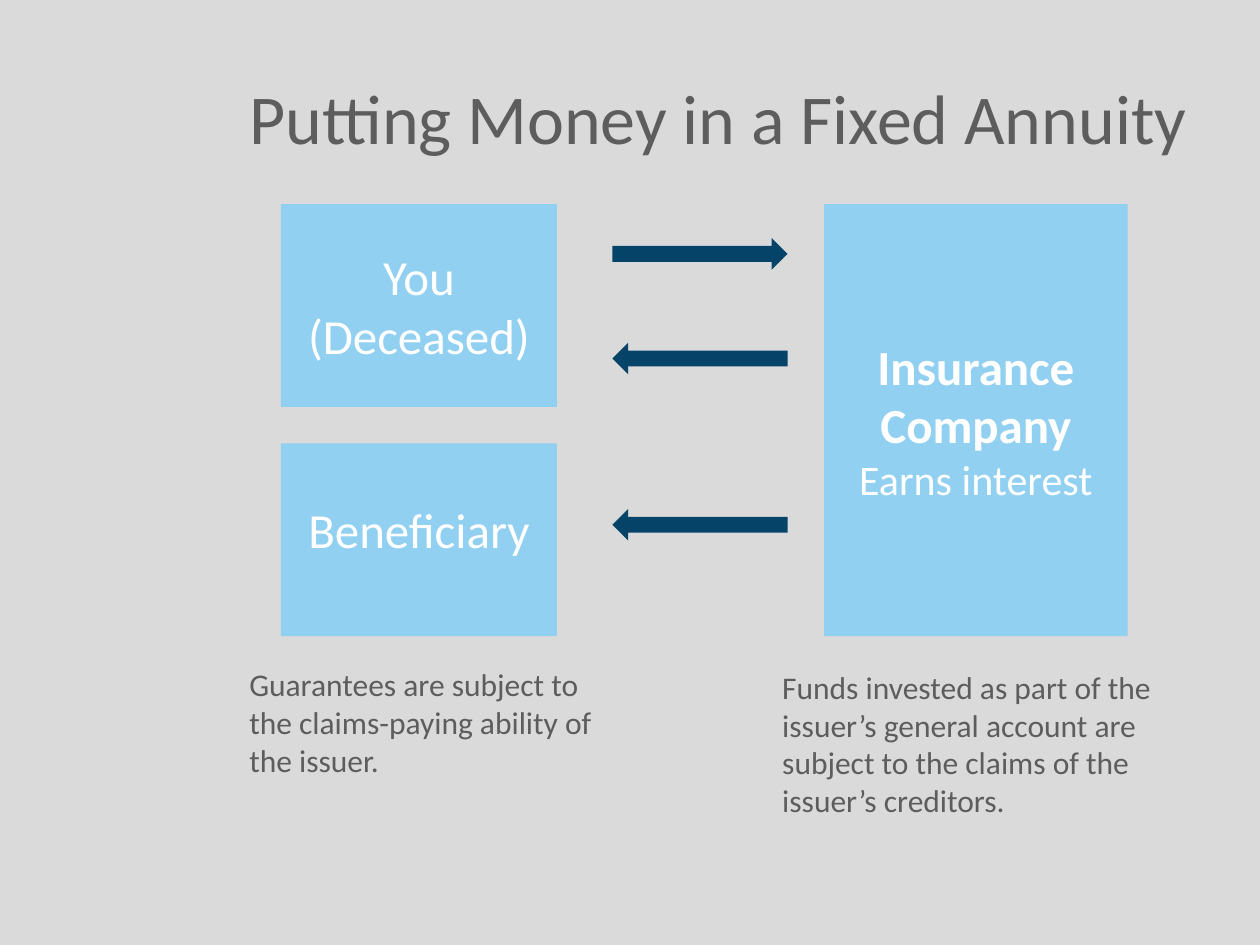
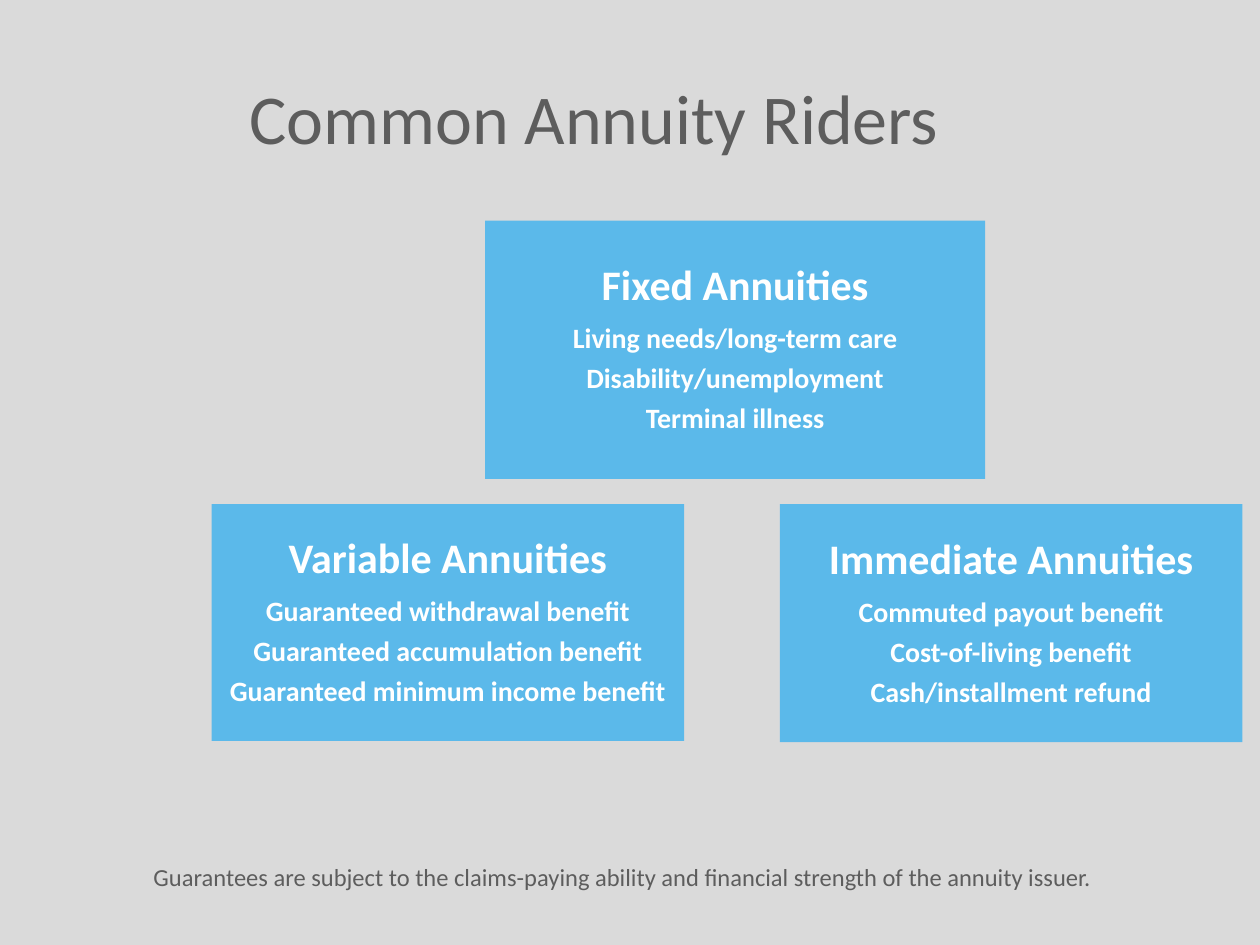
from pptx import Presentation
from pptx.dml.color import RGBColor
from pptx.enum.shapes import MSO_SHAPE as Shape
from pptx.enum.text import MSO_ANCHOR as Anchor, PP_ALIGN as Align
from pptx.util import Inches, Pt

FONT = "Calibri"
BACKGROUND = RGBColor(0xDA, 0xDA, 0xDA)
GRAY = RGBColor(0x5D, 0x5D, 0x5D)
NAVY = RGBColor(0x06, 0x43, 0x69)
PALE_BLUE = RGBColor(0x92, 0xD0, 0xF1)
SKY_BLUE = RGBColor(0x5B, 0xB9, 0xEA)
WHITE = RGBColor(0xFF, 0xFF, 0xFF)


def style(para, size, color, align=Align.LEFT, bold=False):
    para.alignment = align
    for span in para.runs:
        font = span.font
        font.name, font.size, font.bold = FONT, Pt(size), bold
        font.color.rgb = color


def add_titled_page(deck, title):
    page = deck.slides.add_slide(deck.slide_layouts.get_by_name("Title Only"))
    box = page.shapes.title
    box.left, box.top = Inches(1.88), Inches(0.58)
    box.width, box.height = Inches(7.99), Inches(0.69)
    frame = box.text_frame
    frame.text = title
    frame.vertical_anchor = Anchor.MIDDLE
    style(frame.paragraphs[0], 40, GRAY)
    return page


def add_filled(page, preset, bounds, color):
    shape = page.shapes.add_shape(preset, *map(Inches, bounds))
    shape.shadow.inherit = False
    shape.fill.solid()
    shape.fill.fore_color.rgb = color
    shape.line.fill.background()
    return shape


def add_panel(page, bounds, color, lines):
    frame = add_filled(page, Shape.RECTANGLE, bounds, color).text_frame
    frame.word_wrap = True
    frame.vertical_anchor = Anchor.MIDDLE
    frame.text = "\n".join(text for text, size, bold in lines)
    for para, (text, size, bold) in zip(frame.paragraphs, lines):
        style(para, size, WHITE, Align.CENTER, bold)
    return frame


def add_rider_panel(page, bounds, heading, riders):
    lines = [(heading, 24, True)] + [(rider, 16, True) for rider in riders]
    frame = add_panel(page, bounds, SKY_BLUE, lines)
    frame.margin_top = frame.margin_bottom = Inches(0.1)
    for para, (text, size, bold) in zip(frame.paragraphs, lines):
        para.line_spacing = 0.9
        para.space_after = Pt(size * 0.35)


def add_note(page, bounds, text, size):
    frame = page.shapes.add_textbox(*map(Inches, bounds)).text_frame
    frame.word_wrap = True
    frame.text = text
    style(frame.paragraphs[0], size, GRAY)


def build_fixed_annuity(deck):
    page = add_titled_page(deck, "Putting Money in a Fixed Annuity")
    add_panel(page, (2.23, 1.62, 2.19, 1.61), PALE_BLUE, [("You (Deceased)", 28, False)])
    beneficiary = add_panel(page, (2.23, 3.52, 2.19, 1.53), PALE_BLUE,
                            [("Beneficiary", 28, False)])
    beneficiary.margin_bottom = Inches(0.22)
    add_panel(page, (6.54, 1.62, 2.41, 3.43), PALE_BLUE,
              [("Insurance Company", 28, True), ("Earns interest", 24, False)])
    for preset, top in ((Shape.RIGHT_ARROW, 1.89), (Shape.LEFT_ARROW, 2.72),
                        (Shape.LEFT_ARROW, 4.04)):
        add_filled(page, preset, (4.86, top, 1.39, 0.25), NAVY)
    add_note(page, (1.88, 5.23, 3.19, 0.95),
             "Guarantees are subject to the claims-paying ability of the issuer.", 18)
    add_note(page, (6.11, 5.25, 3.64, 1.25),
             "Funds invested as part of the issuer’s general account are subject "
             "to the claims of the issuer’s creditors.", 18)


def build_riders(deck):
    page = add_titled_page(deck, "Common Annuity Riders")
    add_rider_panel(page, (3.85, 1.75, 3.97, 2.05), "Fixed Annuities",
                    ["Living needs/long-term care", "Disability/unemployment",
                     "Terminal illness"])
    add_rider_panel(page, (1.68, 4, 3.75, 1.88), "Variable Annuities",
                    ["Guaranteed withdrawal benefit", "Guaranteed accumulation benefit",
                     "Guaranteed minimum income benefit"])
    add_rider_panel(page, (6.19, 4, 3.67, 1.89), "Immediate Annuities",
                    ["Commuted payout benefit", "Cost-of-living benefit",
                     "Cash/installment refund"])
    add_note(page, (1.12, 6.79, 8.87, 0.34),
             "Guarantees are subject to the claims-paying ability and financial "
             "strength of the annuity issuer.", 14)


def main():
    deck = Presentation()
    deck.slide_width, deck.slide_height = Inches(10), Inches(7.5)
    backdrop = deck.slide_master.background.fill
    backdrop.solid()
    backdrop.fore_color.rgb = BACKGROUND
    build_fixed_annuity(deck)
    build_riders(deck)
    deck.save("out.pptx")


if __name__ == "__main__":
    main()
